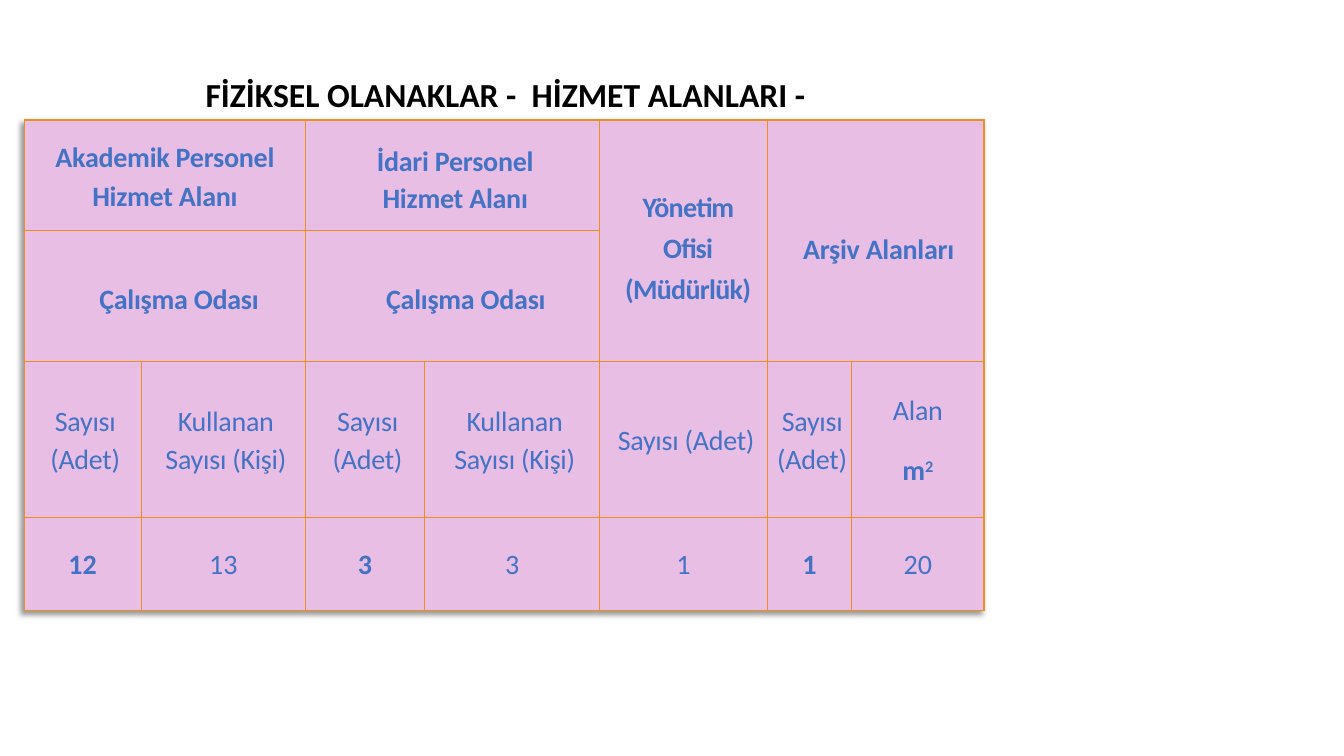
from dataclasses import dataclass

from lxml.etree import SubElement
from pptx import Presentation
from pptx.dml.color import RGBColor
from pptx.enum.text import MSO_ANCHOR, PP_ALIGN
from pptx.oxml import parse_xml
from pptx.oxml.ns import nsdecls, qn
from pptx.util import Inches, Pt


@dataclass(frozen=True)
class Theme:
    font: str = "Calibri"
    title: str = "000000"
    text: str = "4472C4"
    fill: str = "E8BEE5"
    border: str = "EB8F22"
    title_size: int = 24
    body_size: int = 20
    border_width: int = 1


T = Theme()

COLS = [1.16, 1.63, 1.18, 1.74, 1.66, 0.84, 1.31]
ROWS = [1.1, 1.3, 1.54, 0.93]

# Merged headings: row, column, row span, column span, lines, format
ROOM = "Çalışma Odası"
HEADINGS = [
    (0, 0, 1, 2, ["Akademik Personel", "Hizmet Alanı"], dict(top=0.02, before=1.6)),
    (0, 2, 1, 2, ["İdari Personel", "Hizmet Alanı"], dict(top=0.07, left=0.05)),
    (0, 4, 2, 1, ["Yönetim Ofisi", "(Müdürlük)"],
     dict(top=0.1, left=0.15, right=0.06, line=1.19, spacing=-0.5)),
    (0, 5, 2, 2, ["Arşiv Alanları"], dict(top=0.15, left=0.06)),
    (1, 0, 1, 2, [ROOM], dict(top=0.04, left=0.28)),
    (1, 2, 1, 2, [ROOM], dict(top=0.04, left=0.26)),
]

COUNT = (["Sayısı (Adet)"], dict(left=0.06, right=0.01, line=1.1))
USERS = (["Kullanan", "Sayısı (Kişi)"], dict(left=0.05, before=0.7))
MEASURES = [COUNT, USERS, COUNT, USERS, COUNT, COUNT]
VALUES = ["12", "13", "3", "3", "1", "1", "20"]
BOLD_VALUES = {0, 2, 5}


def add_text(p, text, size=T.body_size, color=T.text, bold=False, align=PP_ALIGN.CENTER,
             left=0, right=0, line=1.07, before=0, spacing=0, superscript=False):
    """Add one formatted run to a paragraph."""
    p.alignment = align
    p.line_spacing = line
    p.space_before = Pt(before)
    pPr = p._p.get_or_add_pPr()
    pPr.set("marL", str(Inches(left)))
    pPr.set("marR", str(Inches(right)))
    r = p.add_run()
    r.text = text
    r.font.name = T.font
    r.font.size = Pt(size)
    r.font.bold = bold
    r.font.color.rgb = RGBColor.from_string(color)
    rPr = r._r.get_or_add_rPr()
    if spacing:
        rPr.set("spc", str(round(spacing * 100)))
    if superscript:
        rPr.set("baseline", "30000")


def fill_cell(cell, lines, top=0, before=0, **fmt):
    """Write one paragraph per line, with space only between lines."""
    cell.margin_top = Inches(top)
    tf = cell.text_frame
    for i, text in enumerate(lines):
        p = tf.add_paragraph() if i else tf.paragraphs[0]
        add_text(p, text, before=before if i else 0, **fmt)


def style_cell(cell):
    cell.margin_left = cell.margin_right = cell.margin_top = cell.margin_bottom = 0
    cell.vertical_anchor = MSO_ANCHOR.MIDDLE
    tcPr = cell._tc.get_or_add_tcPr()
    for side in ("lnL", "lnR", "lnT", "lnB"):
        ln = SubElement(tcPr, qn(f"a:{side}"), w=str(Pt(T.border_width)))
        SubElement(SubElement(ln, qn("a:solidFill")), qn("a:srgbClr"), val=T.border)
    cell.fill.solid()
    cell.fill.fore_color.rgb = RGBColor.from_string(T.fill)


def add_shadow(table):
    table._tbl.tblPr.insert(0, parse_xml(
        f'<a:effectLst {nsdecls("a")}><a:outerShdw blurRad="50800" dist="38100" '
        'dir="8100000" algn="tr" rotWithShape="0"><a:srgbClr val="000000">'
        '<a:alpha val="40000"/></a:srgbClr></a:outerShdw></a:effectLst>'))


def add_title(s, x, y, w, h):
    tf = s.shapes.add_textbox(Inches(x), Inches(y), Inches(w), Inches(h)).text_frame
    tf.word_wrap = True
    add_text(tf.paragraphs[0], "FİZİKSEL OLANAKLAR -  HİZMET ALANLARI -", size=T.title_size,
             color=T.title, bold=True, align=PP_ALIGN.LEFT, line=1.0)


def add_areas_table(s, x, y):
    sp = s.shapes.add_table(len(ROWS), len(COLS), Inches(x), Inches(y),
                            Inches(sum(COLS)), Inches(sum(ROWS)))
    table = sp.table
    table.first_row = table.horz_banding = False
    for column, width in zip(table.columns, COLS):
        column.width = Inches(width)
    for row, height in zip(table.rows, ROWS):
        row.height = Inches(height)
    for cell in table.iter_cells():
        style_cell(cell)
    add_shadow(table)

    # Headings
    for row, col, height, width, lines, fmt in HEADINGS:
        cell = table.cell(row, col)
        cell.merge(table.cell(row + height - 1, col + width - 1))
        fill_cell(cell, lines, bold=True, **{"spacing": -0.2, **fmt})

    # Measures
    for col, (lines, fmt) in enumerate(MEASURES):
        fill_cell(table.cell(2, col), lines, spacing=-0.2, **fmt)
    area = table.cell(2, 6)
    fill_cell(area, ["Alan"], spacing=-0.2)
    p = area.text_frame.add_paragraph()
    add_text(p, "m", bold=True, before=17)
    add_text(p, "2", bold=True, before=17, superscript=True)

    # Values
    for col, value in enumerate(VALUES):
        fill_cell(table.cell(3, col), [value], bold=col in BOLD_VALUES)


def main():
    prs = Presentation()
    prs.slide_width, prs.slide_height = Inches(13.33), Inches(7.5)
    s = prs.slides.add_slide(prs.slide_layouts[6])
    add_title(s, 1.94, 0.68, 7.4, 0.5)
    add_areas_table(s, 0.24, 1.19)
    prs.save("out.pptx")


if __name__ == "__main__":
    main()
